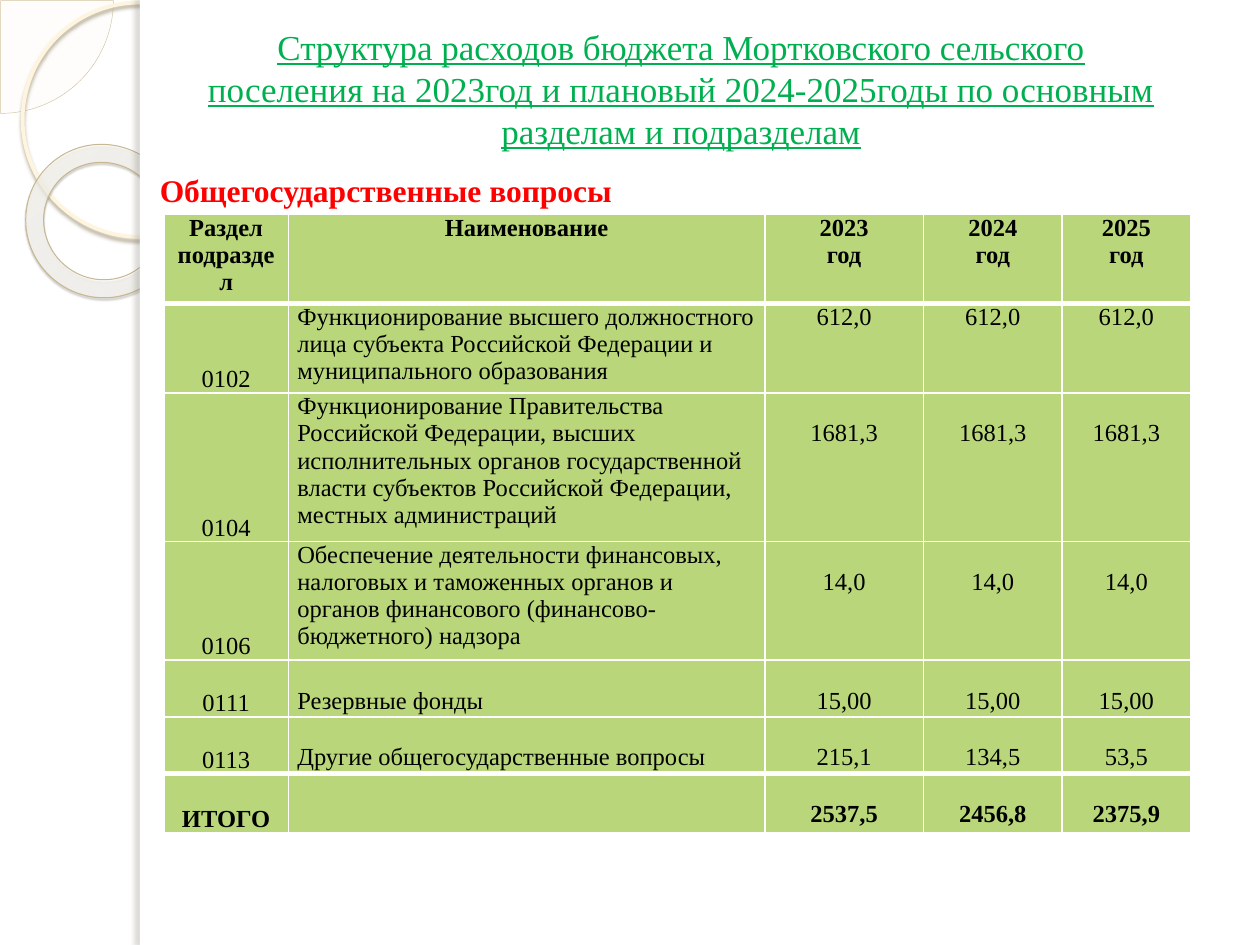
from lxml import etree
from pptx import Presentation
from pptx.dml.color import RGBColor
from pptx.enum.shapes import MSO_SHAPE
from pptx.enum.text import MSO_ANCHOR, MSO_AUTO_SIZE, PP_ALIGN
from pptx.oxml import parse_xml
from pptx.oxml.ns import nsdecls, qn
from pptx.util import Inches, Pt

PIE, OVAL, DONUT, RECT = (MSO_SHAPE.PIE, MSO_SHAPE.OVAL, MSO_SHAPE.DONUT,
                          MSO_SHAPE.RECTANGLE)
LEFT, CENTER = PP_ALIGN.LEFT, PP_ALIGN.CENTER
TOP, MIDDLE, BOTTOM = MSO_ANCHOR.TOP, MSO_ANCHOR.MIDDLE, MSO_ANCHOR.BOTTOM
NO_AUTOFIT = MSO_AUTO_SIZE.NONE

WHITE = RGBColor(0xFF, 0xFF, 0xFF)
BLACK = RGBColor(0x00, 0x00, 0x00)
GREEN = RGBColor(0x00, 0xB0, 0x50)
RED = RGBColor(0xFF, 0x00, 0x00)
CELL_GREEN = RGBColor(0xB9, 0xD7, 0x7A)
CREAM = RGBColor(0xFE, 0xFA, 0xF4)
PIE_LINE = RGBColor(0xD3, 0xC3, 0x9F)
RING_LINE = RGBColor(0xFF, 0xF5, 0xDE)
DONUT_LINE = RGBColor(0xC7, 0xB8, 0x93)
RING_SHADOW = RGBColor(0xB0, 0xA6, 0x8F)
DONUT_SHADOW = RGBColor(0x5A, 0x54, 0x44)
EDGE_SHADOW = RGBColor(0x73, 0x6F, 0x63)
DONUT_STOPS = [(0, RGBColor(0xFF, 0xFC, 0xF6), 70),
               (70, RGBColor(0xFF, 0xFE, 0xFB), 55),
               (100, RGBColor(0xF0, 0xD2, 0x8E), 60)]

FONT = "Times New Roman"
TITLE = ("Структура расходов бюджета Мортковского сельского поселения "
         "на 2023год и плановый 2024-2025годы по основным разделам и подразделам")
COL_WIDTHS = [0.99, 3.78, 1.26, 1.1, 1.02]
ROW_HEIGHTS = [0.71, 0.71, 1.18, 0.94, 0.45, 0.45, 0.47]
LINE_HEIGHT = 0.215
ROWS = [
    ["Раздел подраздел", "Наименование", "2023\nгод", "2024\nгод", "2025\nгод"],
    ["0102", "Функционирование высшего должностного лица субъекта Российской "
     "Федерации и муниципального образования", "612,0", "612,0", "612,0"],
    ["0104", "Функционирование Правительства Российской Федерации, высших "
     "исполнительных органов государственной власти субъектов Российской "
     "Федерации, местных администраций", "1681,3", "1681,3", "1681,3"],
    ["0106", "Обеспечение деятельности финансовых, налоговых и таможенных "
     "органов и органов финансового (финансово-бюджетного) надзора",
     "14,0", "14,0", "14,0"],
    ["0111", "Резервные фонды", "15,00", "15,00", "15,00"],
    ["0113", "Другие общегосударственные вопросы", "215,1", "134,5", "53,5"],
    ["ИТОГО", "", "2537,5", "2456,8", "2375,9"],
]
LAST = len(ROWS) - 1


def color_xml(color, alpha):
    return (f'<a:srgbClr val="{color}"><a:alpha val="{alpha * 1000}"/>'
            '</a:srgbClr>')


def add_figure(s, kind, left, top, width, height, fill=None, line=None,
               line_width=1.0):
    sp = s.shapes.add_shape(kind, Inches(left), Inches(top),
                            Inches(width), Inches(height))
    sp.shadow.inherit = False
    if fill is None:
        sp.fill.background()
    else:
        sp.fill.solid()
        sp.fill.fore_color.rgb = fill
    if line is None:
        sp.line.fill.background()
    else:
        sp.line.color.rgb = line
        sp.line.width = Pt(line_width)
    return sp


def add_shadow(sp, color, alpha, blur, dist, angle):
    sp.element.spPr.find(qn("a:effectLst")).append(parse_xml(
        f'<a:outerShdw {nsdecls("a")} blurRad="{Pt(blur)}" dist="{Pt(dist)}" '
        f'dir="{angle * 60000}" algn="tl" rotWithShape="0">'
        f'{color_xml(color, alpha)}</a:outerShdw>'))


def set_circular_gradient(sp, stops):
    stops_xml = "".join(f'<a:gs pos="{pos * 1000}">{color_xml(color, alpha)}</a:gs>'
                        for pos, color, alpha in stops)
    spPr = sp.element.spPr
    spPr.replace(spPr.find(qn("a:noFill")), parse_xml(
        f'<a:gradFill {nsdecls("a")} rotWithShape="1"><a:gsLst>{stops_xml}</a:gsLst>'
        '<a:path path="circle"><a:fillToRect l="-408000" t="-50000" '
        'r="508000" b="150000"/></a:path></a:gradFill>'))


def add_side_band(s, width, slide_width, height):
    """Rings on the left edge, cut off by the white content panel."""
    pie = add_figure(s, PIE, -0.89, -0.89, 1.79, 1.79, CREAM, PIE_LINE, 0.25)
    pie.adjustments[0], pie.adjustments[1] = 0, 54.02
    fill_color = pie.element.spPr.find(qn("a:solidFill"))[0]
    etree.SubElement(fill_color, qn("a:alpha"), val="33000")

    ring = add_figure(s, OVAL, 0.18, 0.02, 1.86, 1.86, None, RING_LINE, 2.15)
    add_shadow(ring, RING_SHADOW, 85, 2, 2, 90)

    donut = add_figure(s, DONUT, 0.2, 1.15, 1.23, 1.21, None, DONUT_LINE, 0.58)
    donut.adjustments[0] = 0.118
    donut.rotation = 38.6
    set_circular_gradient(donut, DONUT_STOPS)
    add_shadow(donut, DONUT_SHADOW, 35, 1, 1.2, 75)

    add_figure(s, RECT, width, 0, slide_width - width, height, WHITE)
    edge = add_figure(s, RECT, width, 0, 0.08, height, WHITE)
    add_shadow(edge, EDGE_SHADOW, 25, 3, 3, 180)


def format_paragraph(p, size, color, bold=False, align=LEFT):
    p.alignment = align
    p.font.name = FONT
    p.font.size = Pt(size)
    p.font.bold = bold
    p.font.color.rgb = color


def place_title(s, left, top, width, height):
    title = s.shapes.title
    title.left, title.top = Inches(left), Inches(top)
    title.width, title.height = Inches(width), Inches(height)
    title.element.getparent().append(title.element)  # in front of the panel
    tf = title.text_frame
    tf.text = TITLE
    tf.word_wrap = True
    tf.auto_size = NO_AUTOFIT
    tf.vertical_anchor = MIDDLE
    p = tf.paragraphs[0]
    format_paragraph(p, 20, GREEN, align=CENTER)
    p.font.underline = True


def add_section_heading(s, left, top, width, height):
    tf = s.shapes.add_textbox(Inches(left), Inches(top),
                              Inches(width), Inches(height)).text_frame
    tf.word_wrap = True
    tf.text = "Общегосударственные вопросы"
    format_paragraph(tf.paragraphs[0], 18, RED, bold=True)


def set_borders(cell, top, bottom):
    tcPr = cell._tc.get_or_add_tcPr()
    widths = {"lnL": 1, "lnR": 1, "lnT": top, "lnB": bottom}
    for i, (tag, width) in enumerate(widths.items()):
        tcPr.insert(i, parse_xml(
            f'<a:{tag} {nsdecls("a")} w="{Pt(width)}"><a:solidFill>'
            f'<a:srgbClr val="{WHITE}"/></a:solidFill></a:{tag}>'))


def fill_cell(cell, text, row, col):
    cell.fill.solid()
    cell.fill.fore_color.rgb = CELL_GREEN
    set_borders(cell, top=3 if row in (1, LAST) else 1,
                bottom=3 if row in (0, LAST - 1) else 1)
    lowered = (col >= 2 and row >= 2) or (col == 1 and row >= 4)
    cell.margin_left = cell.margin_right = Inches(0.07)
    cell.margin_top = Inches(LINE_HEIGHT if lowered else 0)
    cell.margin_bottom = 0
    cell.vertical_anchor = BOTTOM if col == 0 and row > 0 else TOP
    cell.text = text
    for p in cell.text_frame.paragraphs:
        format_paragraph(p, 14, BLACK, bold=row in (0, LAST),
                         align=LEFT if col == 1 and row > 0 else CENTER)


def add_budget_table(s, left, top):
    table = s.shapes.add_table(
        len(ROWS), len(COL_WIDTHS), Inches(left), Inches(top),
        Inches(sum(COL_WIDTHS)), Inches(sum(ROW_HEIGHTS))).table
    for column, width in zip(table.columns, COL_WIDTHS):
        column.width = Inches(width)
    for r, (values, height) in enumerate(zip(ROWS, ROW_HEIGHTS)):
        table.rows[r].height = Inches(height)
        for c, text in enumerate(values):
            fill_cell(table.cell(r, c), text, r, c)


def main():
    prs = Presentation()
    prs.slide_width, prs.slide_height = Inches(10), Inches(7.5)
    s = prs.slides.add_slide(prs.slide_layouts[5])
    add_side_band(s, 1.11, 10, 7.5)
    place_title(s, 1.5, 0.36, 7.81, 0.68)
    add_budget_table(s, 1.3, 1.7)
    add_section_heading(s, 1.17, 1.31, 3.83, 0.4)
    prs.save("out.pptx")


if __name__ == "__main__":
    main()
